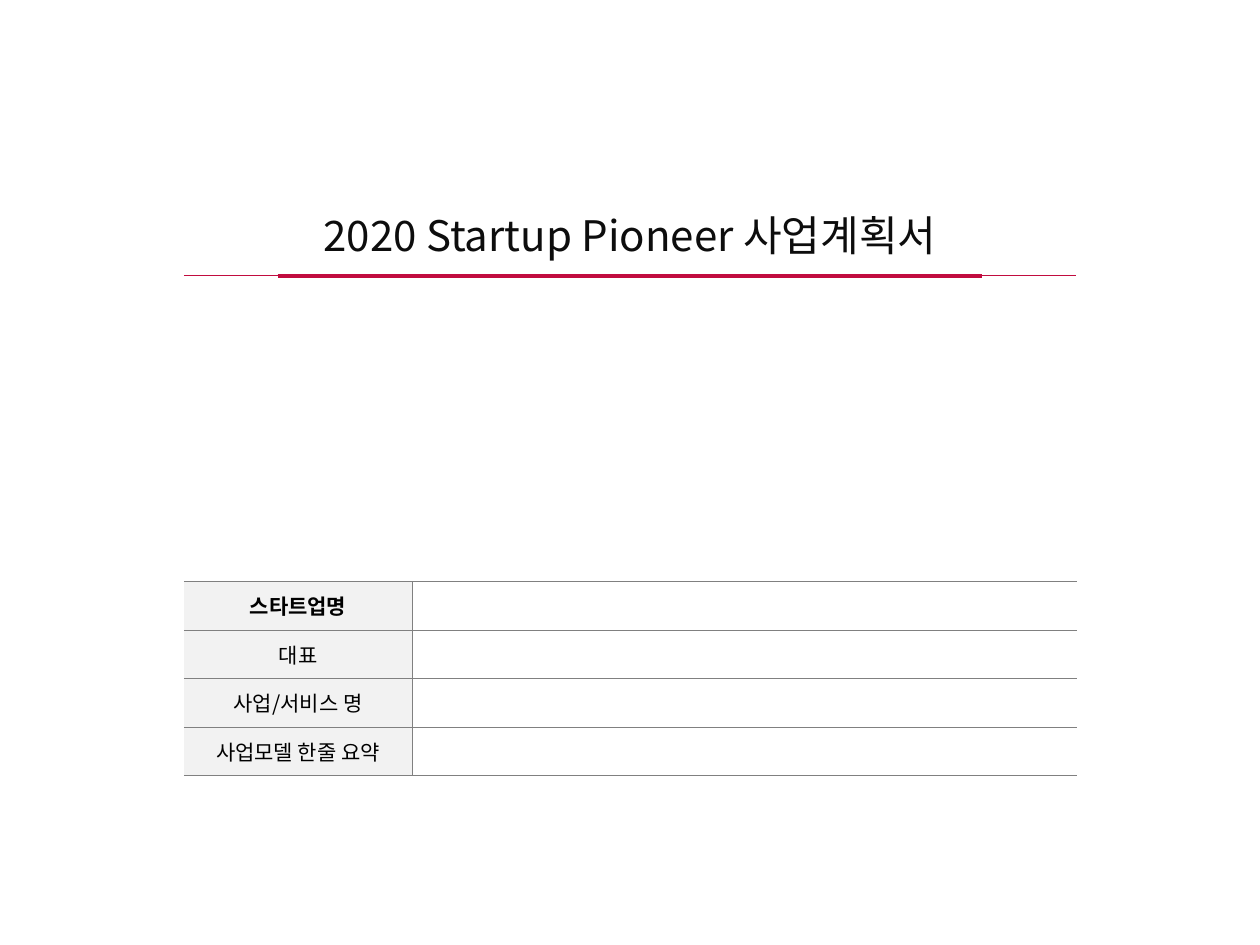
from lxml import etree
from pptx import Presentation
from pptx.dml.color import RGBColor
from pptx.enum.shapes import MSO_CONNECTOR
from pptx.enum.text import MSO_ANCHOR, PP_ALIGN
from pptx.oxml.ns import qn
from pptx.util import Pt

CENTER = PP_ALIGN.CENTER
MIDDLE = MSO_ANCHOR.MIDDLE
STRAIGHT = MSO_CONNECTOR.STRAIGHT

COLORS = {
    "paper": "FFFFFF",
    "title": "0D0D0D",
    "label": "000000",
    "label_fill": "F2F2F2",
    "grid": "808080",
    "accent": "C10C3F",
}
FONT = "Noto Sans CJK KR"
LABELS = ["스타트업명", "대표", "사업/서비스 명", "사업모델 한줄 요약"]


def color(name):
    return RGBColor.from_string(COLORS[name])


def write(frame, text, size=12, ink="label", bold=False):
    paragraph = frame.paragraphs[0]
    paragraph.alignment = CENTER
    paragraph.font.size = Pt(size)
    if not text:
        return
    run = paragraph.add_run()
    run.text = text
    run.font.size = Pt(size)
    run.font.bold = bold
    run.font.name = FONT
    run.font.color.rgb = color(ink)
    etree.SubElement(run.font._element, qn("a:ea"), typeface=FONT)


class CoverSlide:
    """Draws the parts of a plan cover in one style."""

    def __init__(self, deck):
        self.slide = deck.slides.add_slide(deck.slide_layouts[6])

    def title(self, text, left, top, width, height):
        title = self.slide.shapes.add_textbox(Pt(left), Pt(top), Pt(width), Pt(height))
        title.fill.solid()
        title.fill.fore_color.rgb = color("paper")
        frame = title.text_frame
        frame.word_wrap = True
        frame.vertical_anchor = MIDDLE
        write(frame, text, size=24, ink="title")

    def rule(self, start, end, y, weight):
        rule = self.slide.shapes.add_connector(STRAIGHT, Pt(start), Pt(y), Pt(end), Pt(y))
        rule.line.color.rgb = color("accent")
        rule.line.width = Pt(weight)
        etree.SubElement(rule._element.spPr, qn("a:effectLst"))

    def border(self, cell, sides):
        properties = cell._tc.get_or_add_tcPr()
        for position, side in enumerate(("lnL", "lnR", "lnT", "lnB")):
            weight = Pt(0.25) if side in sides else 0
            line = etree.Element(qn(f"a:{side}"), w=str(weight))
            if side in sides:
                fill = etree.SubElement(line, qn("a:solidFill"))
                etree.SubElement(fill, qn("a:srgbClr"), val=COLORS["grid"])
            else:
                etree.SubElement(line, qn("a:noFill"))
            properties.insert(position, line)

    def form(self, labels, left, top, widths, row_height):
        table = self.slide.shapes.add_table(
            len(labels), len(widths), Pt(left), Pt(top),
            Pt(sum(widths)), Pt(row_height * len(labels)),
        ).table
        for column, width in zip(table.columns, widths):
            column.width = Pt(width)
        for row, label in enumerate(labels):
            table.rows[row].height = Pt(row_height)
            columns = ((label, "label_fill", "lnR"), ("", "paper", "lnL"))
            for column, (text, fill, divider) in enumerate(columns):
                cell = table.cell(row, column)
                cell.vertical_anchor = MIDDLE
                cell.fill.solid()
                cell.fill.fore_color.rgb = color(fill)
                self.border(cell, ("lnT", "lnB", divider))
                write(cell.text_frame, text, bold=row == 0)


def main():
    deck = Presentation()
    deck.slide_width, deck.slide_height = Pt(720), Pt(540)
    cover = CoverSlide(deck)
    cover.title("2020 Startup Pioneer 사업계획서", 0, 105.8, 720, 57)
    cover.form(LABELS, 105.1, 332.3, (130.4, 379.8), 27.7)
    cover.rule(105.1, 614.9, 157.5, 0.75)
    cover.rule(158.7, 561.3, 157.5, 2.25)
    deck.save("out.pptx")


if __name__ == "__main__":
    main()
